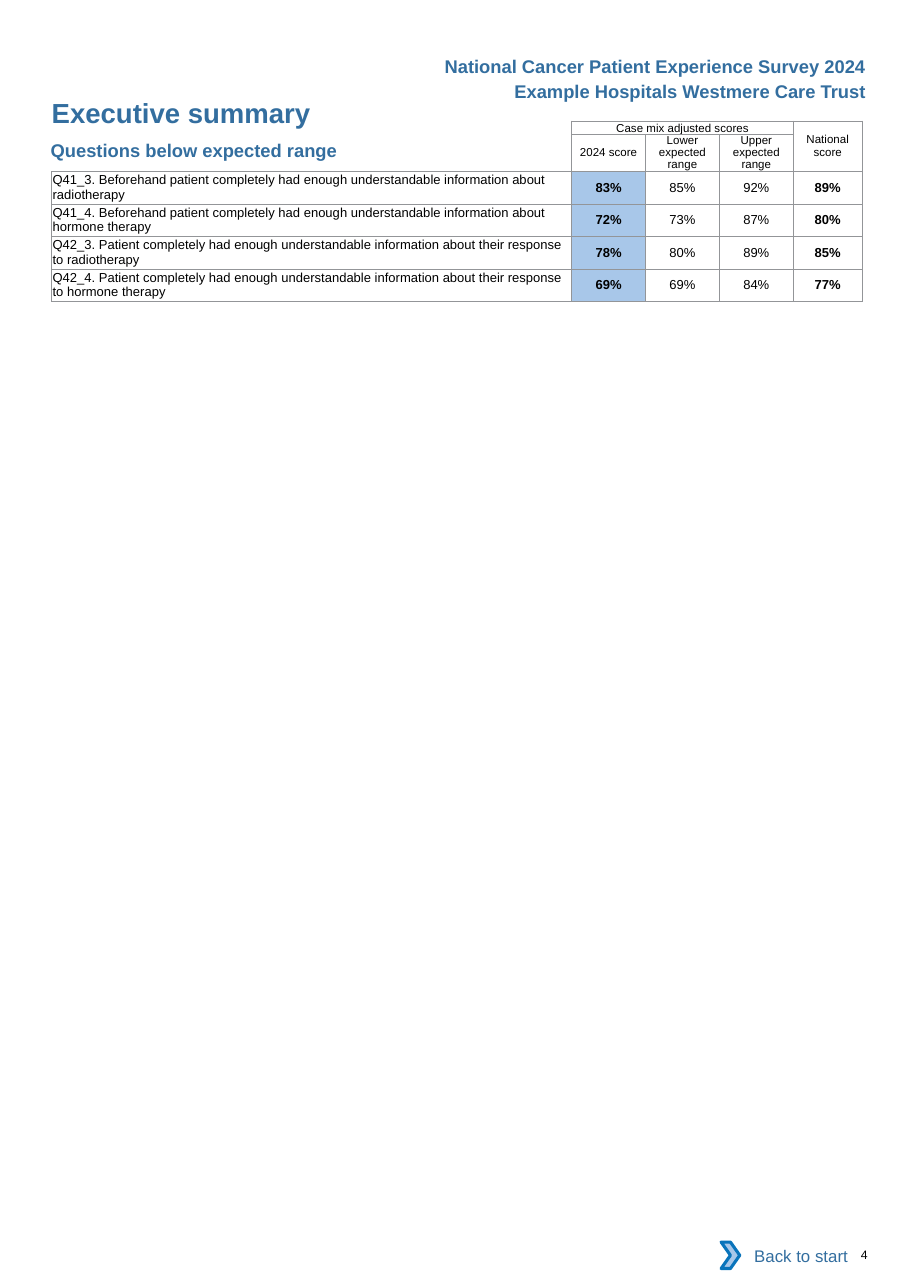
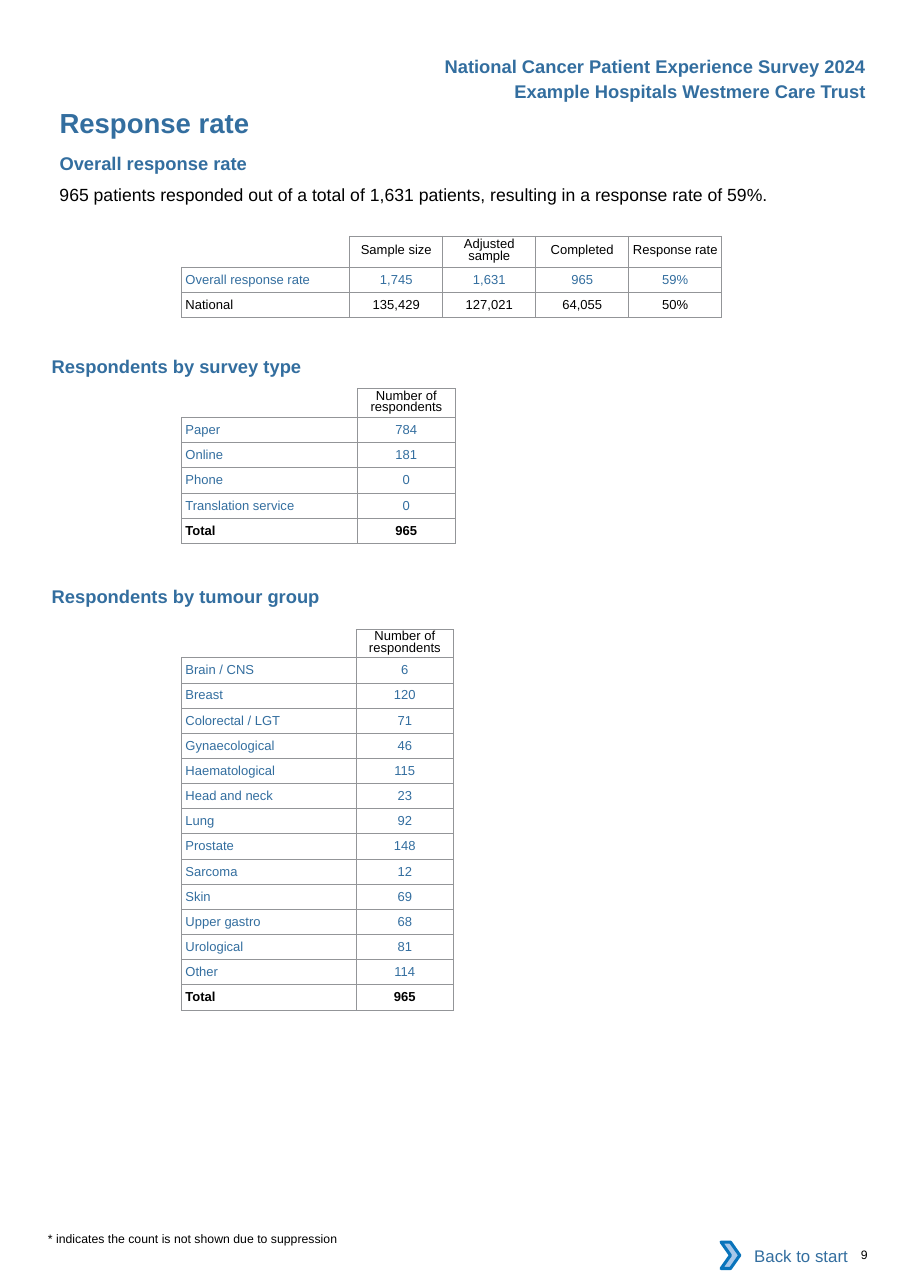
import pptx
import pptx.util
import pptx.dml.color
import pptx.enum.shapes
import pptx.enum.text
import pptx.oxml
import pptx.oxml.ns

Pt = pptx.util.Pt
ALIGN = pptx.enum.text.PP_ALIGN
SHAPE = pptx.enum.shapes.MSO_SHAPE
MIDDLE = pptx.enum.text.MSO_ANCHOR.MIDDLE

HEX = {"blue": "336E9F", "black": "000000", "grid": "939598",
       "pale": "A8C7E9", "edge": "0A74BB", "white": "FFFFFF"}
FONT = "Arial"
WIDTH, HEIGHT = 594.72, 841.68

# Running header: text, top
HEADS = [("Example Hospitals Westmere Care Trust", 52.6),
         ("National Cancer Patient Experience Survey 2024", 36.2)]

# Scores: question, 2024 score, lower, upper, national
SCORES = [
    ("Q41_3. Beforehand patient completely had enough understandable "
     "information about radiotherapy", "83%", "85%", "92%", "89%"),
    ("Q41_4. Beforehand patient completely had enough understandable "
     "information about hormone therapy", "72%", "73%", "87%", "80%"),
    ("Q42_3. Patient completely had enough understandable information "
     "about their response to radiotherapy", "78%", "80%", "89%", "85%"),
    ("Q42_4. Patient completely had enough understandable information "
     "about their response to hormone therapy", "69%", "69%", "84%", "77%"),
]
GROUPED = "Case mix adjusted scores"
BOUNDS = ["2024 score", "Lower expected range", "Upper expected range"]

RATES = [("Overall response rate", "1,745", "1,631", "965", "59%"),
         ("National", "135,429", "127,021", "64,055", "50%")]
TYPES = [("Paper", "784"), ("Online", "181"), ("Phone", "0"),
         ("Translation service", "0"), ("Total", "965")]
TUMOURS = [("Brain / CNS", "6"), ("Breast", "120"), ("Colorectal / LGT", "71"),
           ("Gynaecological", "46"), ("Haematological", "115"),
           ("Head and neck", "23"), ("Lung", "92"), ("Prostate", "148"),
           ("Sarcoma", "12"), ("Skin", "69"), ("Upper gastro", "68"),
           ("Urological", "81"), ("Other", "114"), ("Total", "965")]

# Count tables: top, column widths, heading height, headings, rows
COUNTS = [
    (154.4, [109.8] + [60.8] * 4, 20.2,
     ["Sample size", "Adjusted sample", "Completed", "Response rate"], RATES),
    (253.8, [114.8, 64], 19, ["Number of respondents"], TYPES),
    (411.4, [114, 63.6], 18.4, ["Number of respondents"], TUMOURS),
]
PADS = {"Adjusted sample": 9, "Number of respondents": 6,
        "Lower expected range": 6, "Upper expected range": 6,
        "National score": 4}
PLAIN = {"National", "Total"}


def rgb(name):
    return pptx.dml.color.RGBColor.from_string(HEX[name])


def write(frame, text, size, colour="black", bold=False, align=ALIGN.LEFT,
          lead=None):
    para = frame.paragraphs[0]
    para.alignment = align
    if lead:
        para.line_spacing = Pt(lead)
    run = para.add_run()
    run.text = text
    run.font.name = FONT
    run.font.size = Pt(size)
    run.font.bold = bold
    run.font.color.rgb = rgb(colour)


def label(slide, text, left, top, width, size, **style):
    box = slide.shapes.add_textbox(Pt(left), Pt(top), Pt(width),
                                   Pt(size * 1.2))
    frame = box.text_frame
    frame.word_wrap = True
    frame.margin_left = frame.margin_right = 0
    frame.margin_top = frame.margin_bottom = 0
    write(frame, text, size, **style)


def heading(slide, text, left, top, size=12):
    label(slide, text, left, top, 300, size, colour="blue", bold=True)


def border(cell, sides):
    """Rule the named sides (of L, R, T, B) and clear the others."""
    props = cell._tc.get_or_add_tcPr()
    for i, side in enumerate("LRTB"):
        ink = (f'<a:solidFill><a:srgbClr val="{HEX["grid"]}"/></a:solidFill>'
               if side in sides else "<a:noFill/>")
        props.insert(i, pptx.oxml.parse_xml(
            f'<a:ln{side} {pptx.oxml.ns.nsdecls("a")} w="6350">'
            f'{ink}</a:ln{side}>'))


def grid(slide, left, top, cols, rows):
    """Add an unfilled table with no cell margins."""
    shape = slide.shapes.add_table(len(rows), len(cols), Pt(left), Pt(top),
                                   Pt(sum(cols)), Pt(sum(rows)))
    table = shape.table
    table.first_row = table.horz_banding = False
    for col, width in zip(table.columns, cols):
        col.width = Pt(width)
    for row, height in zip(table.rows, rows):
        row.height = Pt(height)
    for cell in table.iter_cells():
        cell.margin_left = cell.margin_right = 0
        cell.margin_top = cell.margin_bottom = 0
        cell.vertical_anchor = MIDDLE
        cell.fill.background()
        # An empty cell must not stretch its row
        end = cell.text_frame.paragraphs[0]._p.get_or_add_endParaRPr()
        end.set("sz", "100")
    return table


def put(cell, text, size=8.5, align=ALIGN.CENTER, pad=0, **style):
    cell.margin_left = cell.margin_right = Pt(pad)
    write(cell.text_frame, text, size, align=align, **style)


def rule(table, corner):
    """Border every cell; the first `corner` rows of column 0 stay open."""
    for r, row in enumerate(table.rows):
        for c, cell in enumerate(row.cells):
            border(cell, "RB" if c == 0 and r < corner else "LRTB")


def scores(slide):
    table = grid(slide, 33.6, 79, [340, 48.3, 48.3, 48.3, 45],
                 [9, 24] + [21.25] * len(SCORES))
    rule(table, 2)
    table.cell(0, 0).merge(table.cell(1, 0))
    table.cell(0, 1).merge(table.cell(0, 3))
    table.cell(0, 4).merge(table.cell(1, 4))
    put(table.cell(0, 1), GROUPED, 7.5, lead=9)
    put(table.cell(0, 4), "National score", 7.5, pad=PADS["National score"])
    for c, text in enumerate(BOUNDS, 1):
        put(table.cell(1, c), text, 7.5, pad=PADS.get(text, 0), lead=7.6)
    for r, (ask, *values) in enumerate(SCORES, 2):
        put(table.cell(r, 0), ask, align=ALIGN.LEFT, pad=0.8)
        for c, value in enumerate(values, 1):
            put(table.cell(r, c), value, bold=c in (1, 4))
        fill = table.cell(r, 1).fill
        fill.solid()
        fill.fore_color.rgb = rgb("pale")


def counts(slide, top, cols, high, names, rows):
    table = grid(slide, 118.8, top, cols, [high] + [16.45] * len(rows))
    rule(table, 1)
    for c, name in enumerate(names, 1):
        put(table.cell(0, c), name, pad=PADS.get(name, 0), lead=7.6)
    for r, (name, *values) in enumerate(rows, 1):
        style = {"colour": "black" if name in PLAIN else "blue",
                 "bold": name == "Total"}
        put(table.cell(r, 0), name, align=ALIGN.LEFT, pad=2.4, **style)
        for c, value in enumerate(values, 1):
            put(table.cell(r, c), value, **style)


def block(group, kind, left, top, width, height, fill):
    shape = group.shapes.add_shape(kind, Pt(left), Pt(top), Pt(width),
                                   Pt(height))
    shape.shadow.inherit = False
    shape.fill.solid()
    shape.fill.fore_color.rgb = rgb(fill)
    return shape


def page(deck, number):
    """Add a slide with the running header and footer."""
    slide = deck.slides.add_slide(deck.slide_layouts[6])
    for text, top in HEADS:
        label(slide, text, 266, top, 300, 12, colour="blue", bold=True,
              align=ALIGN.RIGHT)
    label(slide, number, 562.7, 815.3, 25, 8)
    group = slide.shapes.add_group_shape()
    back = block(group, SHAPE.RECTANGLE, 476.3, 805.2, 85, 30.2, "white")
    back.line.fill.background()
    back.text_frame.word_wrap = True
    back.text_frame.vertical_anchor = MIDDLE
    write(back.text_frame, "Back to start", 11, "blue", align=ALIGN.RIGHT)
    arrow = block(group, SHAPE.CHEVRON, 471.3, 811.7, 12.2, 17.3, "pale")
    arrow.line.color.rgb = rgb("edge")
    arrow.line.width = Pt(2)
    return slide


def main():
    deck = pptx.Presentation()
    deck.slide_width, deck.slide_height = Pt(WIDTH), Pt(HEIGHT)

    slide = page(deck, "4")
    heading(slide, "Executive summary", 33.8, 62.9, 18)
    heading(slide, "Questions below expected range", 33.1, 90.7)
    scores(slide)

    slide = page(deck, "9")
    heading(slide, "Response rate", 38.9, 69.5, 18)
    heading(slide, "Overall response rate", 38.9, 99.6)
    label(slide, "965 patients responded out of a total of 1,631 patients, "
          "resulting in a response rate of 59%.", 38.9, 120.1, 518, 11.5)
    heading(slide, "Respondents by survey type", 33.8, 232.1)
    heading(slide, "Respondents by tumour group", 33.8, 382.6)
    for spec in COUNTS:
        counts(slide, *spec)
    label(slide, "* indicates the count is not shown due to suppression",
          31.3, 804.5, 220, 8)
    deck.save("out.pptx")


if __name__ == "__main__":
    main()
